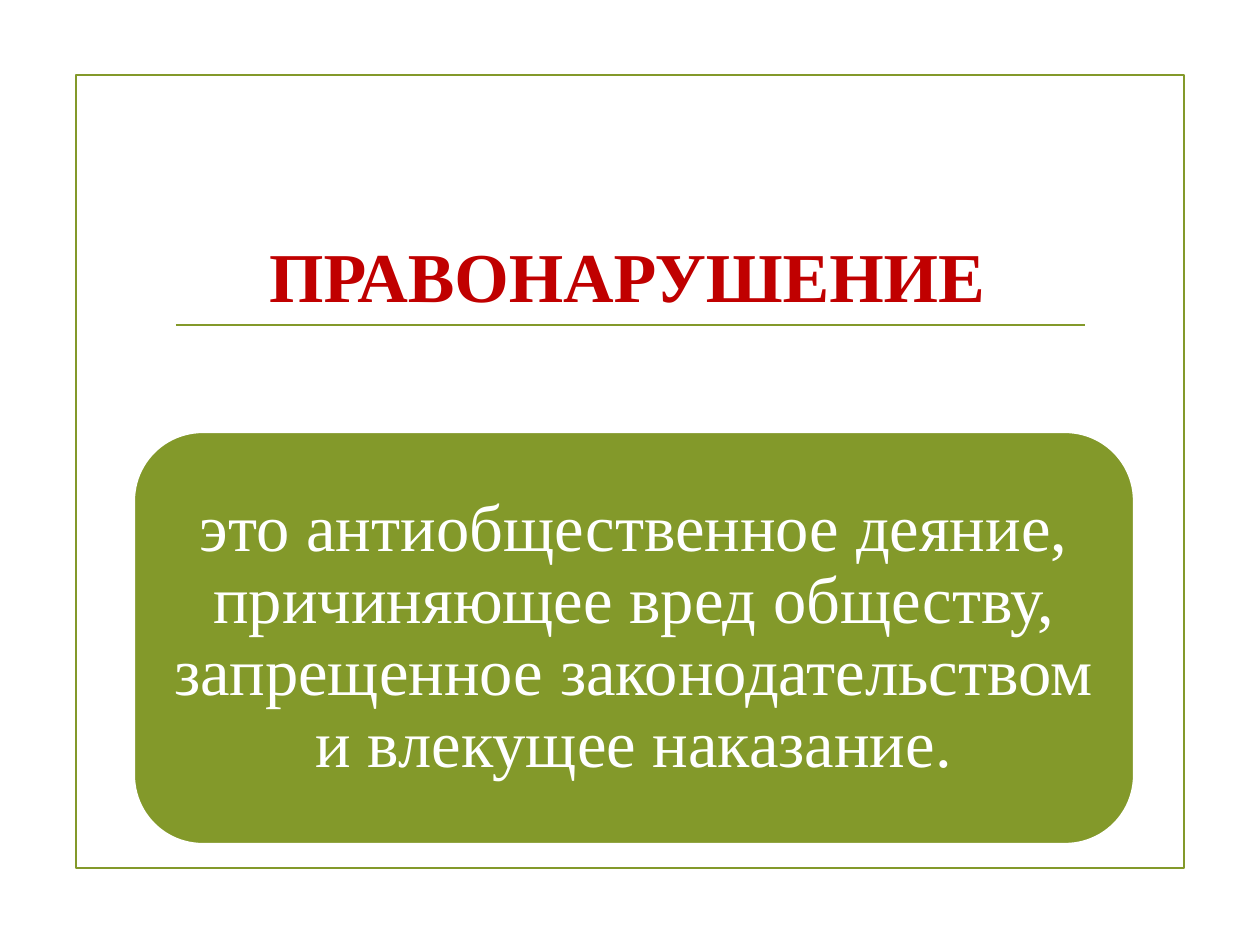
from pptx import Presentation
from pptx.dml.color import RGBColor
from pptx.enum.shapes import MSO_CONNECTOR, MSO_SHAPE
from pptx.enum.text import MSO_ANCHOR, PP_ALIGN
from pptx.oxml.ns import qn
from pptx.util import Emu, Pt
from lxml.etree import SubElement

GREEN = RGBColor(0x83, 0x99, 0x2A)
RED = RGBColor(0xC0, 0x00, 0x00)
WHITE = RGBColor(0xFF, 0xFF, 0xFF)
FONT = "Times New Roman"


def px(*vals):
    return [Emu(round(v * 914400 / 126)) for v in vals]


def write(shape, text, size, color, bold=False):
    frame = shape.text_frame
    frame.word_wrap = True
    frame.vertical_anchor = MSO_ANCHOR.MIDDLE
    para = frame.paragraphs[0]
    para.alignment = PP_ALIGN.CENTER
    run = para.add_run()
    run.text = text
    run.font.name = FONT
    run.font.size = Pt(size)
    run.font.bold = bold
    run.font.color.rgb = color
    return para


prs = Presentation()
prs.slide_width, prs.slide_height = px(1260, 945)
slide = prs.slides.add_slide(prs.slide_layouts[5])
shapes = slide.shapes

# Frame around the slide
frame = shapes.add_shape(MSO_SHAPE.RECTANGLE, *px(76, 75, 1108, 793))
frame.shadow.inherit = False
frame.fill.background()
frame.line.color.rgb = GREEN
frame.line.width = Pt(1.25)

# Rule under the title
rule = shapes.add_connector(MSO_CONNECTOR.STRAIGHT, *px(176, 325, 1085, 325))
rule.line.color.rgb = GREEN
rule.line.width = Pt(1.25)
SubElement(rule._element.spPr, qn("a:effectLst"))

# Title
title = shapes.title
title.left, title.top, title.width, title.height = px(233, 195, 788, 158)
write(title, "ПРАВОНАРУШЕНИЕ", 40, RED, True)

# Definition card
card = shapes.add_shape(MSO_SHAPE.ROUNDED_RECTANGLE, *px(134, 432, 1000, 412))
card.shadow.inherit = False
card.fill.solid()
card.fill.fore_color.rgb = GREEN
card.line.color.rgb = WHITE
card.line.width = Pt(1.25)
body = card.text_frame
body.margin_left = body.margin_right = body.margin_top = body.margin_bottom = 0
para = write(card, "это антиобщественное деяние, причиняющее вред обществу, "
             "запрещенное законодательством и влекущее наказание.", 38, WHITE)
para.line_spacing = 0.9

prs.save("out.pptx")
